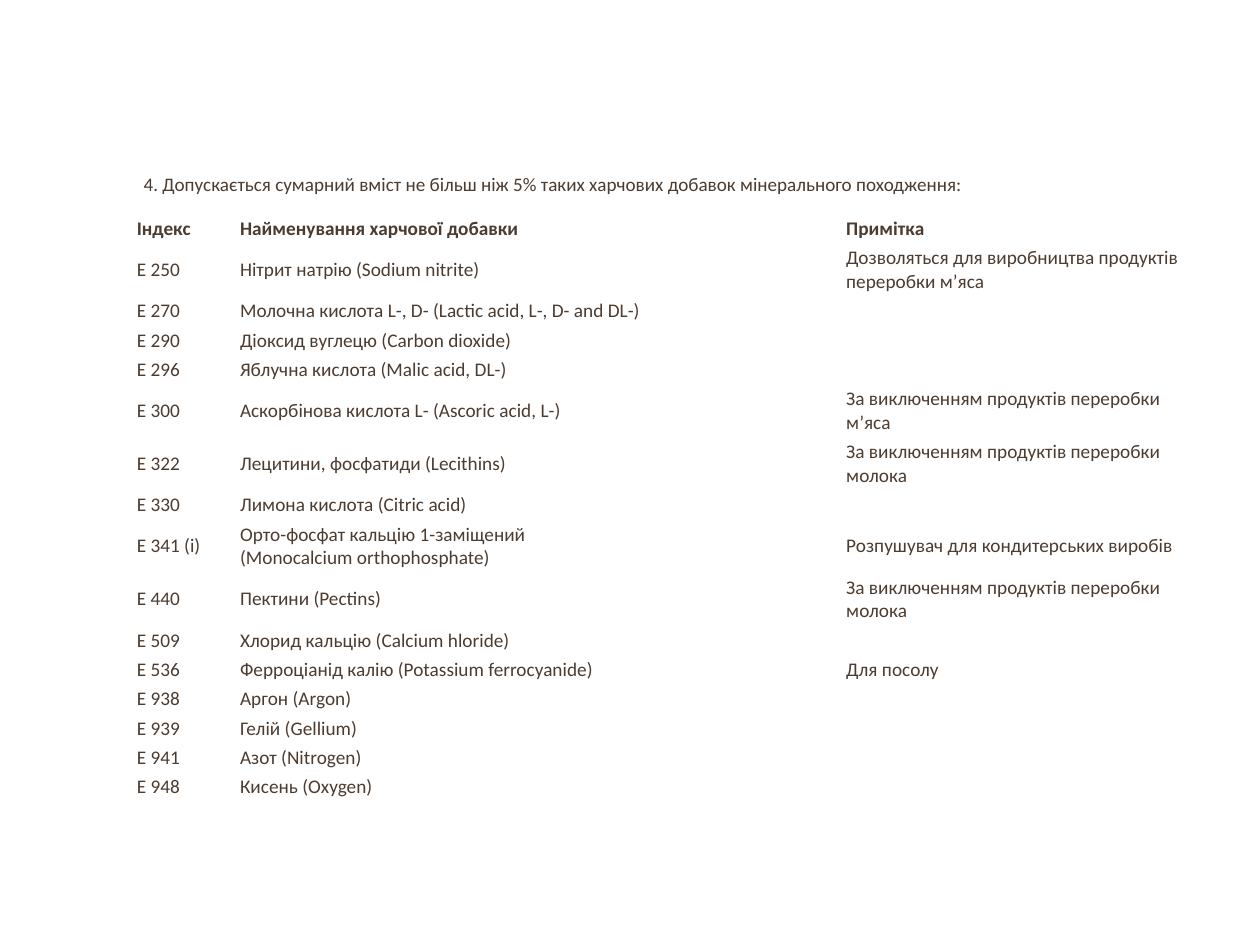
from dataclasses import dataclass

from lxml.etree import SubElement
from pptx import Presentation
from pptx.dml.color import RGBColor as Rgb
from pptx.enum.text import MSO_ANCHOR as Anchor, MSO_AUTO_SIZE as AutoSize, PP_ALIGN as Align
from pptx.oxml.ns import qn
from pptx.util import Pt


@dataclass(frozen=True)
class Theme:
    font: str = "Calibri"
    ink: str = "4C3B2F"
    paper: str = "FFFFFF"
    border: str = "E0E0E0"
    heading_size: float = 10.9
    table_size: float = 11


@dataclass(frozen=True)
class Additive:
    index: str
    name: str
    note: str = ""
    tall: bool = False


THEME = Theme()
LEFT = 74.9
COLUMN_WIDTHS = (59, 346.4, 208.8)
ROW_HEIGHT, TALL_ROW_HEIGHT = 16.76, 30.3
HEADING = ("4. Допускається сумарний вміст не більш ніж 5% таких харчових "
           "добавок мінерального походження:")
NO_DAIRY = "За виключенням продуктів переробки молока"

# The first entry holds the column headings
ADDITIVES = (
    Additive("Індекс", "Найменування харчової добавки", "Примітка"),
    Additive("Е 250", "Нітрит натрію (Sodium nitrite)",
             "Дозволяться для виробництва продуктів переробки м’яса", True),
    Additive("Е 270", "Молочна кислота L-, D- (Lactic acid, L-, D- and DL-)"),
    Additive("Е 290", "Діоксид вуглецю (Carbon dioxide)"),
    Additive("Е 296", "Яблучна кислота (Malic acid, DL-)"),
    Additive("Е 300", "Аскорбінова кислота L- (Ascoric acid, L-)",
             "За виключенням продуктів переробки м’яса", True),
    Additive("Е 322", "Лецитини, фосфатиди (Lecithins)", NO_DAIRY, True),
    Additive("Е 330", "Лимона кислота (Citric acid)"),
    Additive("Е 341 (і)", "Орто-фосфат кальцію 1-заміщений\n(Monocalcium orthophosphate)",
             "Розпушувач для кондитерських виробів", True),
    Additive("Е 440", "Пектини (Pectins)", NO_DAIRY, True),
    Additive("Е 509", "Хлорид кальцію (Calcium hloride)"),
    Additive("Е 536", "Ферроціанід калію (Potassium ferrocyanide)", "Для посолу"),
    Additive("Е 938", "Аргон (Argon)"),
    Additive("Е 939", "Гелій (Gellium)"),
    Additive("Е 941", "Азот (Nitrogen)"),
    Additive("Е 948", "Кисень (Oxygen)"),
)


def add_run(paragraph, text: str, size: float, bold: bool = False) -> None:
    run = paragraph.add_run()
    run.text = text
    run.font.name = THEME.font
    run.font.size = Pt(size)
    run.font.bold = bold
    run.font.color.rgb = Rgb.from_string(THEME.ink)


def add_heading(slide) -> None:
    heading = slide.shapes.title
    heading.left, heading.top, heading.width, heading.height = map(Pt, (LEFT, 95, 487.4, 20.2))
    frame = heading.text_frame
    frame.word_wrap = False
    frame.auto_size = AutoSize.SHAPE_TO_FIT_TEXT
    frame.vertical_anchor = Anchor.MIDDLE
    frame.paragraphs[0].alignment = Align.LEFT
    add_run(frame.paragraphs[0], HEADING, THEME.heading_size)


def set_borders(cell) -> None:
    properties = cell._tc.get_or_add_tcPr()
    for side in ("a:lnL", "a:lnR", "a:lnT", "a:lnB"):
        line = SubElement(properties, qn(side), w="0")
        fill = SubElement(line, qn("a:solidFill"))
        SubElement(fill, qn("a:srgbClr"), val=THEME.border)


def fill_cell(cell, text: str, bold: bool) -> None:
    set_borders(cell)
    cell.fill.solid()
    cell.fill.fore_color.rgb = Rgb.from_string(THEME.paper)
    cell.vertical_anchor = Anchor.MIDDLE
    cell.margin_left = cell.margin_right = Pt(3.3)
    cell.margin_top = cell.margin_bottom = Pt(1.65)
    paragraph = cell.text_frame.paragraphs[0]
    if not text:
        # An empty cell needs a small type size too, or its row grows
        SubElement(paragraph._p, qn("a:endParaRPr"), sz=str(THEME.table_size * 100))
        return
    for number, part in enumerate(text.split("\n")):
        if number:
            paragraph.add_line_break()
        add_run(paragraph, part, THEME.table_size, bold)


def add_additives_table(slide) -> None:
    heights = [TALL_ROW_HEIGHT if additive.tall else ROW_HEIGHT for additive in ADDITIVES]
    table = slide.shapes.add_table(
        len(ADDITIVES), len(COLUMN_WIDTHS), Pt(LEFT), Pt(122.4),
        Pt(sum(COLUMN_WIDTHS)), Pt(sum(heights))).table
    table.horz_banding = False
    for column, width in zip(table.columns, COLUMN_WIDTHS):
        column.width = Pt(width)
    for position, (row, additive, height) in enumerate(zip(table.rows, ADDITIVES, heights)):
        row.height = Pt(height)
        for cell, text in zip(row.cells, (additive.index, additive.name, additive.note)):
            fill_cell(cell, text, bold=position == 0)


def main() -> None:
    deck = Presentation()
    deck.slide_width, deck.slide_height = Pt(720), Pt(540)
    slide = deck.slides.add_slide(deck.slide_layouts[5])
    add_heading(slide)
    add_additives_table(slide)
    deck.save("out.pptx")


if __name__ == "__main__":
    main()
